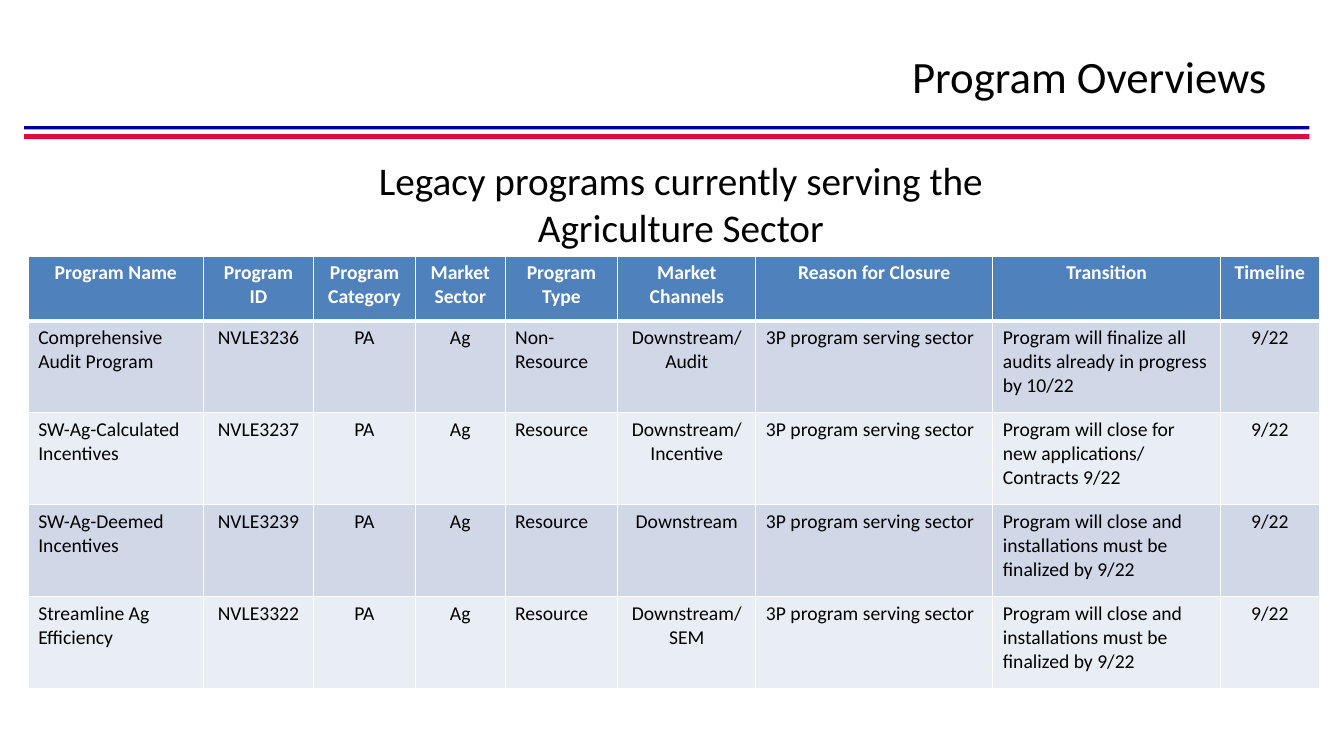
from lxml.etree import SubElement
from pptx import Presentation
from pptx.dml.color import RGBColor
from pptx.enum.shapes import MSO_SHAPE
from pptx.enum.text import MSO_ANCHOR, PP_ALIGN
from pptx.oxml.ns import qn
from pptx.util import Cm, Pt

TITLE = "Program Overviews"
SUBTITLE = "Legacy programs currently serving the Agriculture Sector"
REASON = "3P program serving sector"
INSTALLATIONS = "Program will close and installations must be finalized by 9/22"
HEADER = ["Program Name", "Program ID", "Program Category", "Market Sector",
          "Program Type", "Market Channels", "Reason for Closure",
          "Transition", "Timeline"]
PROGRAMS = [
    ("Comprehensive Audit Program", "NVLE3236", "PA", "Ag", "Non-Resource",
     "Downstream/ Audit", REASON,
     "Program will finalize all audits already in progress by 10/22", "9/22"),
    ("SW-Ag-Calculated Incentives", "NVLE3237", "PA", "Ag", "Resource",
     "Downstream/ Incentive", REASON,
     "Program will close for new applications/ Contracts 9/22", "9/22"),
    ("SW-Ag-Deemed Incentives", "NVLE3239", "PA", "Ag", "Resource",
     "Downstream", REASON, INSTALLATIONS, "9/22"),
    ("Streamline Ag Efficiency", "NVLE3322", "PA", "Ag", "Resource",
     "Downstream/ SEM", REASON, INSTALLATIONS, "9/22"),
]
COLUMN_WIDTHS = [4.42, 2.77, 2.57, 2.26, 2.84, 3.48, 5.97, 5.74, 2.49]
LEFT_COLUMNS = {0, 4, 6, 7}
HEADER_HEIGHT, ROW_HEIGHT = 1.63, 2.32

FONT = "Calibri"
BLACK = RGBColor(0x00, 0x00, 0x00)
WHITE = RGBColor(0xFF, 0xFF, 0xFF)
RED = RGBColor(0xDE, 0x0A, 0x42)
NAVY = RGBColor(0x00, 0x00, 0x99)
HEADER_BLUE = RGBColor(0x4F, 0x81, 0xBD)
BANDS = [RGBColor(0xD0, 0xD8, 0xE8), RGBColor(0xE9, 0xED, 0xF4)]
RULES = [(3.38, 0.13, RED), (3.18, 0.08, NAVY)]  # top, height, colour


def write(tf, text, size, align, color=BLACK, bold=False):
    p = tf.paragraphs[0]
    p.text = text
    p.alignment = align
    p.font.name = FONT
    p.font.size = Pt(size)
    p.font.bold = bold
    p.font.color.rgb = color


def set_borders(cell, widths):
    """Draw white borders; widths maps a side (L, R, T, B) to points."""
    tc_pr = cell._tc.get_or_add_tcPr()
    for side, width in widths.items():
        ln = SubElement(tc_pr, qn(f"a:ln{side}"), w=str(Pt(width)))
        fill = SubElement(ln, qn("a:solidFill"))
        SubElement(fill, qn("a:srgbClr"), val=str(WHITE))


def add_program_table(s):
    rows = [HEADER, *PROGRAMS]
    heights = [HEADER_HEIGHT] + [ROW_HEIGHT] * len(PROGRAMS)
    table = s.shapes.add_table(
        len(rows), len(HEADER), Cm(0.71), Cm(6.45),
        Cm(sum(COLUMN_WIDTHS)), Cm(sum(heights))).table
    for column, width in zip(table.columns, COLUMN_WIDTHS):
        column.width = Cm(width)
    for i, (values, height) in enumerate(zip(rows, heights)):
        table.rows[i].height = Cm(height)
        is_header = i == 0
        for j, text in enumerate(values):
            cell = table.cell(i, j)
            set_borders(cell, {"L": 1, "R": 1, "T": 3 if i == 1 else 1,
                               "B": 3 if is_header else 1})
            cell.fill.solid()
            cell.fill.fore_color.rgb = HEADER_BLUE if is_header else BANDS[(i - 1) % 2]
            centred = is_header or j not in LEFT_COLUMNS
            write(cell.text_frame, text, 14,
                  PP_ALIGN.CENTER if centred else PP_ALIGN.LEFT,
                  WHITE if is_header else BLACK, is_header)


def main():
    prs = Presentation()
    prs.slide_width, prs.slide_height = Cm(33.87), Cm(19.05)
    s = prs.slides.add_slide(prs.slide_layouts[5])

    for top, height, color in RULES:
        rule = s.shapes.add_shape(MSO_SHAPE.RECTANGLE, Cm(0.61), Cm(top),
                                  Cm(32.39), Cm(height))
        rule.shadow.inherit = False
        rule.fill.solid()
        rule.fill.fore_color.rgb = color
        rule.line.fill.background()

    title = s.shapes.title
    title.left, title.top, title.width, title.height = (
        Cm(7.62), Cm(0.76), Cm(24.56), Cm(2.31))
    title.text_frame.vertical_anchor = MSO_ANCHOR.MIDDLE
    write(title.text_frame, TITLE, 32, PP_ALIGN.RIGHT)

    add_program_table(s)

    sp = s.shapes.add_textbox(Cm(9.02), Cm(3.81), Cm(16.28), Cm(2.64))
    sp.text_frame.word_wrap = True
    write(sp.text_frame, SUBTITLE, 28, PP_ALIGN.CENTER)

    prs.save("out.pptx")


if __name__ == "__main__":
    main()
